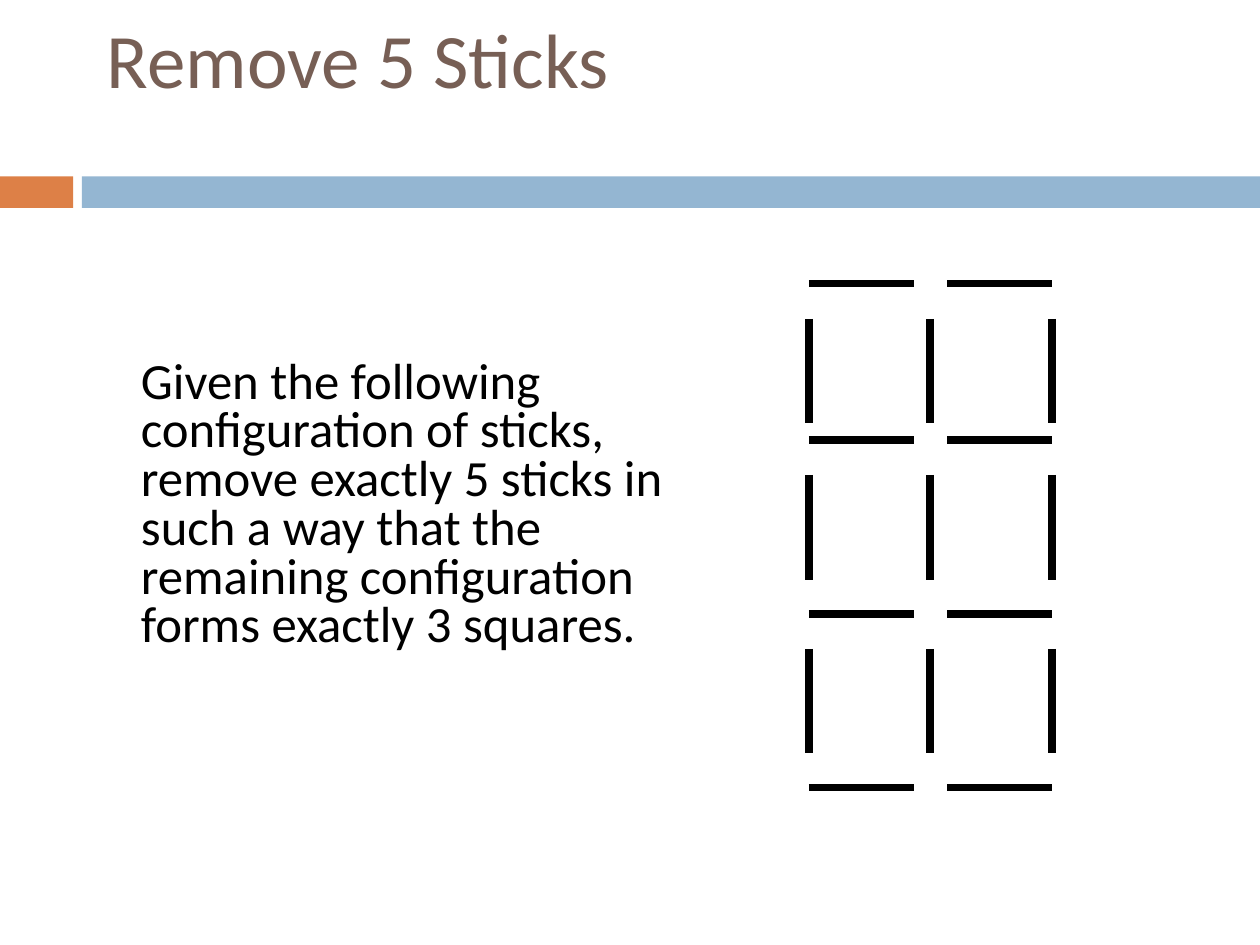
import pptx
import pptx.util
import pptx.dml.color
import pptx.enum.shapes
import pptx.enum.text
import pptx.oxml.ns
import lxml.etree

Inches = pptx.util.Inches
Pt = pptx.util.Pt

COLORS = {
    "accent": "DD8047",
    "band": "94B6D2",
    "title": "775F55",
    "black": "000000",
}
FONT = "Calibri"
STICK_LENGTH = 0.83
STICK_WIDTH = 4.5


def rgb(name):
    return pptx.dml.color.RGBColor.from_string(COLORS[name])


def add_bar(slide, left, width, color):
    shape = slide.shapes.add_shape(
        pptx.enum.shapes.MSO_SHAPE.RECTANGLE,
        Inches(left), Inches(1.4), Inches(width), Inches(0.25))
    shape.shadow.inherit = False
    shape.fill.solid()
    shape.fill.fore_color.rgb = rgb(color)
    shape.line.fill.background()


def add_text(slide, box, text, size, color, anchor):
    shape = slide.shapes.add_textbox(*[Inches(value) for value in box])
    text_frame = shape.text_frame
    text_frame.word_wrap = True
    text_frame.vertical_anchor = anchor
    text_frame.text = text
    paragraph = text_frame.paragraphs[0]
    font = paragraph.runs[0].font
    font.name = FONT
    font.size = Pt(size)
    font.color.rgb = rgb(color)
    return paragraph


def add_stick(slide, left, top, width, height):
    connector = slide.shapes.add_connector(
        pptx.enum.shapes.MSO_CONNECTOR.STRAIGHT,
        Inches(left), Inches(top), Inches(left + width), Inches(top + height))
    connector.line.color.rgb = rgb("black")
    connector.line.width = Pt(STICK_WIDTH)
    properties = connector._element.spPr
    lxml.etree.SubElement(properties, pptx.oxml.ns.qn("a:effectLst"))


def add_stick_grid(slide):
    for top in (2.25, 3.49, 4.87, 6.25):
        for left in (6.42, 7.52):
            add_stick(slide, left, top, STICK_LENGTH, 0)
    for top in (2.53, 3.77, 5.15):
        for left in (6.42, 7.38, 8.35):
            add_stick(slide, left, top, 0, STICK_LENGTH)


def main():
    presentation = pptx.Presentation()
    presentation.slide_width = Inches(10)
    presentation.slide_height = Inches(7.5)
    slide = presentation.slides.add_slide(presentation.slide_layouts[6])

    add_bar(slide, 0, 0.58, "accent")
    add_bar(slide, 0.65, 9.35, "band")
    add_text(slide, (0.75, -0.17, 8.5, 1.25), "Remove 5 Sticks", 44, "title",
             pptx.enum.text.MSO_ANCHOR.MIDDLE)
    paragraph = add_text(
        slide, (0.67, 2.81, 4.75, 2.52),
        "Given the following configuration of sticks, remove exactly 5 sticks "
        "in such a way that the remaining configuration forms exactly 3 squares.",
        29, "black", pptx.enum.text.MSO_ANCHOR.TOP)
    paragraph.line_spacing = 0.8
    paragraph.space_before = Pt(7)
    paragraph._p.get_or_add_pPr().set("marL", str(Inches(0.35)))
    add_stick_grid(slide)

    presentation.save("out.pptx")


if __name__ == "__main__":
    main()
